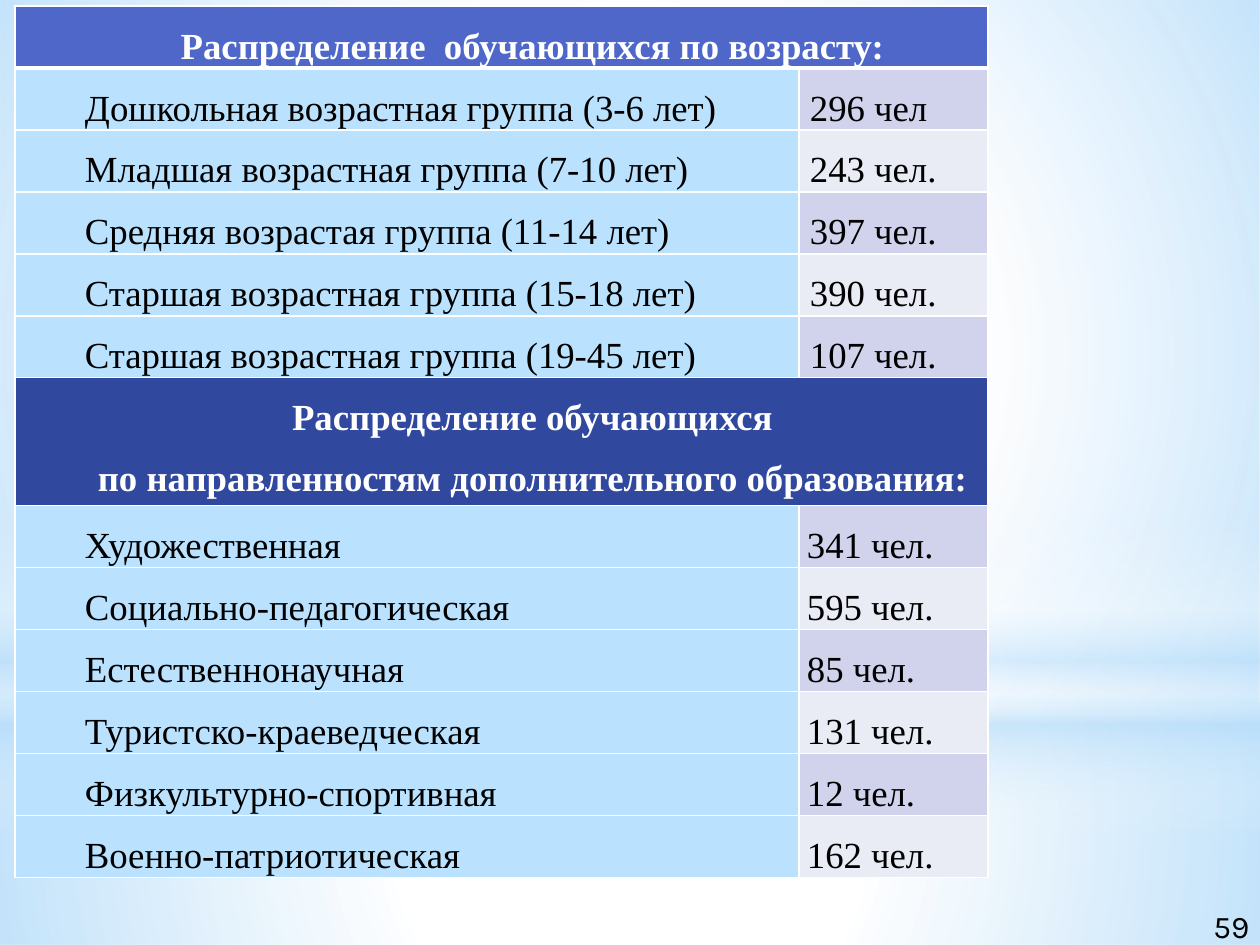
from lxml.etree import SubElement
from pptx import Presentation
from pptx.dml.color import RGBColor
from pptx.enum.shapes import MSO_SHAPE
from pptx.enum.text import PP_ALIGN
from pptx.oxml.ns import qn
from pptx.util import Emu, Pt

WHITE = RGBColor(0xFF, 0xFF, 0xFF)
BLACK = RGBColor(0, 0, 0)
SKY = RGBColor(0xB4, 0xDC, 0xFA)
AGE_BLUE = RGBColor(0x4E, 0x67, 0xC8)
FIELD_BLUE = RGBColor(0x31, 0x48, 0x9F)
LABEL_BLUE = RGBColor(0xBA, 0xE2, 0xFE)
BANDS = (RGBColor(0xD0, 0xD3, 0xEB), RGBColor(0xE9, 0xEB, 0xF5))

HEADING = {"name": "Times New Roman", "size": Pt(21), "bold": True}
BODY = {**HEADING, "bold": False}
NUMBER = {"name": "Karla", "size": Pt(18)}
LABEL_INDENT = 62
ROW_HEIGHT = 62

GLOWS = [
    (MSO_SHAPE.RECTANGLE, (0, 703, 1260, 242), True,
     [(0, WHITE, 91), (37, WHITE, 76), (100, SKY, 79)]),
    (MSO_SHAPE.RECTANGLE, (0, 0, 1260, 703), True,
     [(0, WHITE, 89), (48, WHITE, 62), (100, SKY, 79)]),
    (MSO_SHAPE.RECTANGLE, (0, 519, 1260, 315), False,
     [(0, WHITE, 0), (29, WHITE, 30), (45, SKY, 40),
      (55, WHITE, 26), (65, SKY, 60), (100, WHITE, 0)]),
    (MSO_SHAPE.OVAL, (0, 220, 1260, 703), True,
     [(0, WHITE, 100), (56, WHITE, 0)]),
]

SECTIONS = [
    (["Распределение  обучающихся по возрасту:"], AGE_BLUE, 3, [
        ("Дошкольная возрастная группа (3-6 лет)", "296 чел"),
        ("Младшая возрастная группа (7-10 лет)", "243 чел."),
        ("Средняя возрастая группа (11-14 лет)", "397 чел."),
        ("Старшая возрастная группа (15-18 лет)", "390 чел."),
        ("Старшая возрастная группа (19-45 лет)", "107 чел."),
    ]),
    (["Распределение обучающихся",
      "по направленностям дополнительного образования:"], FIELD_BLUE, 0, [
        ("Художественная", "341 чел."),
        ("Социально-педагогическая", "595 чел."),
        ("Естественнонаучная", "85 чел."),
        ("Туристско-краеведческая", "131 чел."),
        ("Физкультурно-спортивная", "12 чел."),
        ("Военно-патриотическая", "162 чел."),
    ]),
]


def px(n):
    """Turn pixels into EMU."""
    return Emu(n * 914400 // 126)


def set_attrs(target, values):
    """Set each attribute named in a dict."""
    for name, value in values.items():
        setattr(target, name, value)


def add_run(p, text, font, color):
    """Add formatted text to a paragraph."""
    r = p.add_run()
    r.text = text
    set_attrs(r.font, font)
    r.font.color.rgb = color


def add_glow(s, kind, box, radial, stops):
    """Add a background shape with a translucent gradient."""
    sp = s.shapes.add_shape(kind, *map(px, box))
    sp.shadow.inherit = False
    sp.line.fill.background()
    sp.fill.gradient()
    grad = sp.fill._xPr.find(qn("a:gradFill"))
    for child in list(grad):
        grad.remove(child)
    gs_list = SubElement(grad, qn("a:gsLst"))
    for pos, color, opacity in stops:
        gs = SubElement(gs_list, qn("a:gs"), pos=str(pos * 1000))
        clr = SubElement(gs, qn("a:srgbClr"), val=str(color))
        SubElement(clr, qn("a:alpha"), val=str(opacity * 1000))
    if radial:
        shade = SubElement(grad, qn("a:path"), path="circle")
        SubElement(shade, qn("a:fillToRect"), dict.fromkeys("ltrb", "50000"))
    else:
        SubElement(grad, qn("a:lin"), ang="5400000", scaled="0")


def set_borders(cell, bottom=1):
    """Draw white lines around a cell."""
    tc_pr = cell._tc.get_or_add_tcPr()
    for side, width in zip("LRTB", (1, 1, 1, bottom)):
        ln = SubElement(tc_pr, qn(f"a:ln{side}"), w=str(Pt(width)))
        fill = SubElement(ln, qn("a:solidFill"))
        SubElement(fill, qn("a:srgbClr"), val=str(WHITE))


def fill_cell(cell, lines, fill, indent, heading=False, bottom=1):
    """Write and format one table cell."""
    set_attrs(cell, {"margin_left": px(8), "margin_right": px(8),
                     "margin_top": 0, "margin_bottom": 0})
    set_borders(cell, bottom)
    cell.fill.solid()
    cell.fill.fore_color.rgb = fill
    tf = cell.text_frame
    for i, line in enumerate(lines):
        p = tf.add_paragraph() if i else tf.paragraphs[0]
        p.alignment = PP_ALIGN.CENTER if heading else PP_ALIGN.JUSTIFY
        p.line_spacing = 1.5
        set_indent = p._p.get_or_add_pPr().set
        set_indent("marL", "0")
        set_indent("indent", str(px(indent)))
        add_run(p, line, HEADING if heading else BODY,
                WHITE if heading else BLACK)


def add_student_table(s):
    """Add the table of students by age and field of study."""
    count = sum(1 + len(rows) for _, _, _, rows in SECTIONS)
    table = s.shapes.add_table(count, 2, px(15), px(6), px(973),
                               px(ROW_HEIGHT * (count + 1))).table
    for column, width in zip(table.columns, (784, 189)):
        column.width = px(width)
    top = 0
    for number, (title, color, rule, rows) in enumerate(SECTIONS):
        table.rows[top].height = px(ROW_HEIGHT if len(title) == 1 else 128)
        head, tail = table.cell(top, 0), table.cell(top, 1)
        head.merge(tail)
        set_borders(tail, rule or 1)
        fill_cell(head, title, color, LABEL_INDENT, True, rule or 1)
        for i, (label, value) in enumerate(rows):
            row = top + 1 + i
            table.rows[row].height = px(ROW_HEIGHT)
            fill_cell(table.cell(row, 0), [label], LABEL_BLUE, LABEL_INDENT)
            fill_cell(table.cell(row, 1), [value], BANDS[i % 2],
                      0 if number else 3)
        top += 1 + len(rows)


def add_slide_number(s, text):
    """Add the page number in the corner."""
    tf = s.shapes.add_textbox(px(1201), px(901), px(84), px(50)).text_frame
    tf.word_wrap = True
    add_run(tf.paragraphs[0], text, NUMBER, BLACK)


def main():
    """Build the slide and save it."""
    prs = Presentation()
    prs.slide_width, prs.slide_height = px(1260), px(945)
    s = prs.slides.add_slide(prs.slide_layouts[6])
    for glow in GLOWS:
        add_glow(s, *glow)
    add_student_table(s)
    add_slide_number(s, "59")
    prs.save("out.pptx")


if __name__ == "__main__":
    main()
